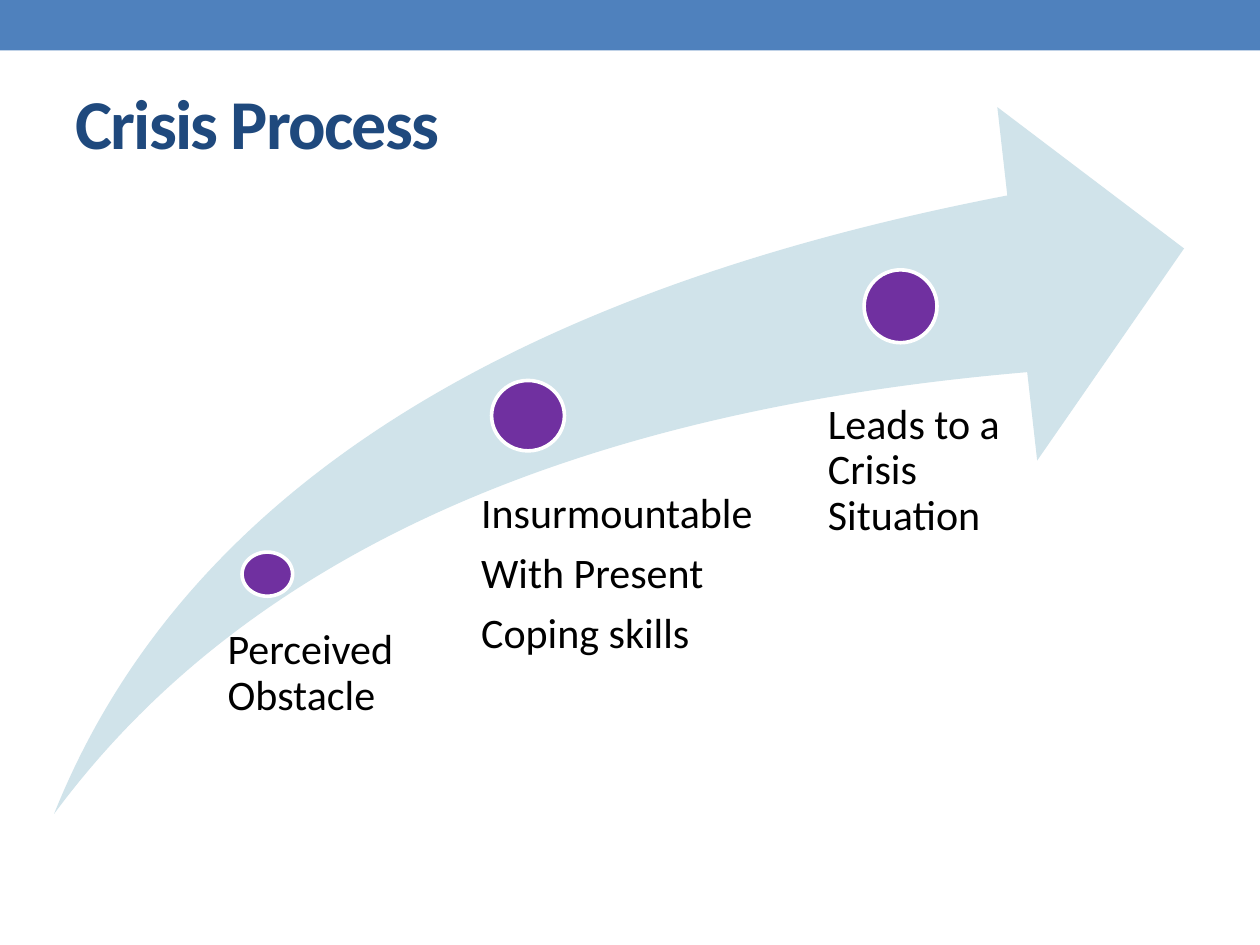
import pptx
import pptx.dml.color
import pptx.enum.shapes
import pptx.enum.text
import pptx.oxml.ns
import pptx.util

Cm = pptx.util.Cm
Pt = pptx.util.Pt
SHAPE = pptx.enum.shapes.MSO_SHAPE
ANCHOR = pptx.enum.text.MSO_ANCHOR

# Per stage: dot box, label box (cm from the arrow's corner), label indent, lines
STAGES = [
    ((3.79, 8.97, 1.02, 0.89), (3.2, 10.51, 5.31, 4.11), 0.3,
     ["Perceived Obstacle"]),
    ((8.82, 5.51, 1.47, 1.42), (8.05, 7.77, 7.11, 4.6), 0.56,
     ["Insurmountable", "With Present", "Coping skills"]),
    ((16.33, 3.28, 1.47, 1.47), (14.81, 5.97, 5.46, 5.03), 0.79,
     ["Leads to a Crisis Situation"]),
]


def color(hex_code):
    return pptx.dml.color.RGBColor.from_string(hex_code)


def add_filled(slide, preset, box, fill, outline=None):
    shape = slide.shapes.add_shape(preset, *map(Cm, box))
    shape.shadow.inherit = False
    shape.fill.solid()
    shape.fill.fore_color.rgb = color(fill)
    if outline:
        shape.line.color.rgb = color(outline)
        shape.line.width = Pt(2.08)
    else:
        shape.line.fill.background()
    return shape


def add_text(slide, box, lines, size, hex_code, anchor, bold=False):
    text_box = slide.shapes.add_textbox(*map(Cm, box))
    frame = text_box.text_frame
    frame.word_wrap = True
    frame.vertical_anchor = anchor
    frame.text = "\n".join(lines)
    for paragraph in frame.paragraphs:
        paragraph.font.name = "Calibri"
        paragraph.font.size = Pt(size)
        paragraph.font.bold = bold
        paragraph.font.color.rgb = color(hex_code)
    return text_box


def add_header(slide, box):
    left, top, width, height = box
    # Bar across the top edge
    add_filled(slide, SHAPE.RECTANGLE, (left, top, width, 1.02), "4F81BD")
    # Title, with slightly tightened letters
    title = add_text(slide, (left + 1.27, top + 1.07, width - 2.54, height - 1.07),
                     ["Crisis Process"], 40, "1F497D", ANCHOR.MIDDLE, bold=True)
    for run in title.element.iter(pptx.oxml.ns.qn("a:r")):
        run.get_or_add_rPr().set("spc", "-100")


def add_process(slide, box):
    left, top = box[:2]
    # Rising arrow
    arrow = add_filled(slide, SHAPE.SWOOSH_ARROW, box, "D0E3EA")
    arrow.adjustments[0] = 0.25
    arrow.adjustments[1] = 0.25

    # Stages along the arrow
    for dot, label, indent, lines in STAGES:
        dot_box, label_box = ((left + x, top + y, w, h) for x, y, w, h in (dot, label))
        add_filled(slide, SHAPE.OVAL, dot_box, "7030A0", "FFFFFF")
        frame = add_text(slide, label_box, lines, 24, "000000", ANCHOR.TOP).text_frame
        frame.margin_left = Cm(indent)
        frame.margin_top = frame.margin_right = frame.margin_bottom = 0
        for paragraph in frame.paragraphs:
            paragraph.line_spacing = 0.9
            paragraph.space_after = Pt(8.4)


def main():
    presentation = pptx.Presentation()
    presentation.slide_width = Cm(25.4)
    presentation.slide_height = Cm(19.05)
    slide = presentation.slides.add_slide(presentation.slide_layouts[6])
    add_header(slide, (0, 0, 25.4, 3.81))
    add_process(slide, (1.09, 2.16, 22.78, 14.25))
    presentation.save("out.pptx")


if __name__ == "__main__":
    main()
